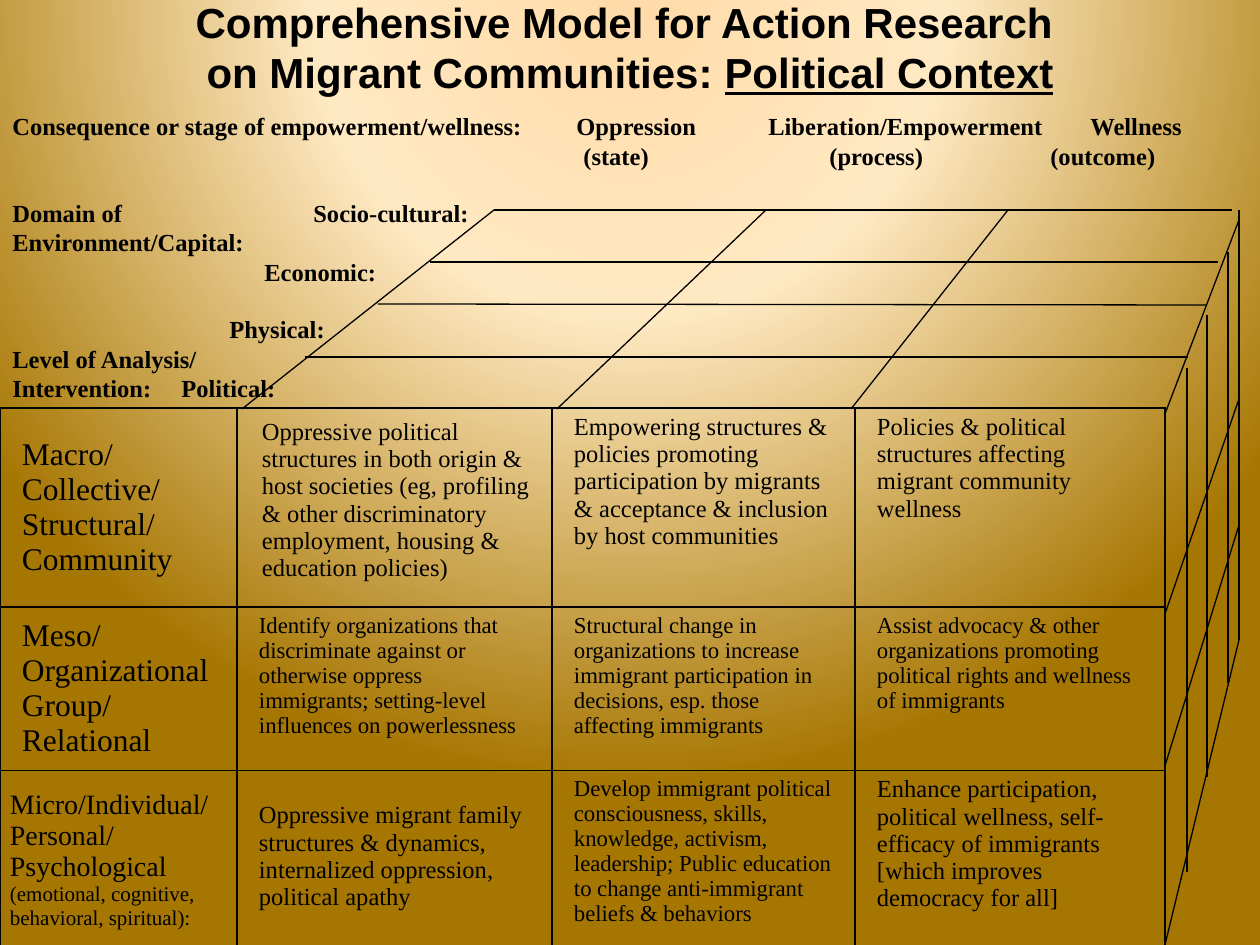
from dataclasses import dataclass

from lxml.etree import SubElement
from pptx import Presentation
from pptx.dml.color import RGBColor
from pptx.enum.shapes import MSO_CONNECTOR
from pptx.enum.text import MSO_ANCHOR, MSO_AUTO_SIZE, PP_ALIGN
from pptx.oxml import parse_xml
from pptx.oxml.ns import nsdecls, qn
from pptx.util import Pt

EMU_PER_PX = 914400 / 126


@dataclass(frozen=True)
class Theme:
    heading_font: str = "Arial"
    body_font: str = "Times New Roman"
    ink: str = "000000"
    gradient: tuple = ((0, "FFDBA9"), (40, "FFE9C2"), (100, "A67602"))
    title: int = 24
    level: int = 18
    small_level: int = 16
    body: int = 14
    tight: int = 13
    note: int = 12
    line: float = 0.75
    blank_line: int = 16


THEME = Theme()


@dataclass(frozen=True)
class Cell:
    """Paragraphs are lists of (text, size) runs; margins are px, in order left, top, right."""
    paragraphs: list
    margins: tuple = (22, 6, 22)
    anchor: MSO_ANCHOR = MSO_ANCHOR.TOP


def plain(text, size, **options):
    return Cell([[(text, size)]], **options)


HEADINGS = [  # text, tab stops in px, space before in points
    ("Consequence or stage of empowerment/wellness:\tOppression"
     "\tLiberation/Empowerment\tWellness", (564, 756, 1078), 0),
    ("\t(state)\t(process)\t(outcome)", (571, 817, 1038), 0),
    ("Domain of\tSocio-cultural:", (301,), THEME.blank_line),
    ("Environment/Capital:", (), 0),
    ("\tEconomic:", (252,), 0),
    ("\tPhysical:", (217,), THEME.blank_line),
    ("Level of Analysis/", (), 0),
    ("Intervention:\tPolitical:", (169,), 0),
]

MIDDLE = MSO_ANCHOR.MIDDLE
MATRIX = [
    [plain("Macro/ Collective/ Structural/ Community", THEME.level, anchor=MIDDLE),
     plain("Oppressive political structures in both origin & host societies (eg, profiling "
           "& other discriminatory employment, housing & education policies)",
           THEME.body, margins=(25, 11, 22)),
     plain("Empowering structures & policies promoting participation by migrants "
           "& acceptance & inclusion by host communities", THEME.body),
     plain("Policies & political structures affecting migrant community wellness",
           THEME.body)],
    [Cell([[("Meso/", THEME.level)], [("Organizational Group/", THEME.level)],
           [("Relational", THEME.level)]], anchor=MIDDLE),
     plain("Identify organizations that discriminate against or otherwise oppress "
           "immigrants; setting-level influences on powerlessness", THEME.tight),
     plain("Structural change in organizations to increase immigrant participation in "
           "decisions, esp. those affecting immigrants", THEME.tight),
     plain("Assist advocacy & other organizations promoting political rights and "
           "wellness of immigrants", THEME.tight)],
    [Cell([[("Micro/Individual/ Personal/", THEME.small_level)],
           [("Psychological", THEME.small_level),
            (" (emotional, cognitive, behavioral, spiritual):", THEME.note)]],
          margins=(10, 6, 9), anchor=MIDDLE),
     plain("Oppressive migrant family structures & dynamics, internalized oppression, "
           "political apathy", THEME.body, margins=(22, 32, 22)),
     plain("Develop immigrant political consciousness, skills, knowledge, activism, "
           "leadership; Public education to change anti-immigrant beliefs & behaviors",
           THEME.tight, margins=(22, 6, 10)),
     plain("Enhance participation, political wellness, self-efficacy of immigrants "
           "[which improves democracy for all]", THEME.body)],
]
COLUMN_WIDTHS = (237, 315, 303, 310)
ROW_HEIGHTS = (199, 159, 179)


def px(length):
    return round(length * EMU_PER_PX)


def add_run(paragraph, text, size, font=THEME.body_font, bold=False, underline=False):
    run = paragraph.add_run()
    run.text = text
    run.font.name = font
    run.font.size = Pt(size)
    run.font.bold = bold
    run.font.underline = underline
    run.font.color.rgb = RGBColor.from_string(THEME.ink)


def set_background(slide):
    stops = "".join(f'<a:gs pos="{position * 1000}"><a:srgbClr val="{color}"/></a:gs>'
                    for position, color in THEME.gradient)
    slide.element.cSld.insert(0, parse_xml(
        f'<p:bg {nsdecls("p", "a")}><p:bgPr><a:gradFill rotWithShape="0">'
        f'<a:gsLst>{stops}</a:gsLst><a:path path="circle">'
        '<a:fillToRect l="50000" t="-80000" r="50000" b="180000"/></a:path>'
        '</a:gradFill><a:effectLst/></p:bgPr></p:bg>'))


def place_title(slide, left, top, width, height):
    title = slide.shapes.title
    title.left, title.top, title.width, title.height = map(px, (left, top, width, height))
    frame = title.text_frame
    frame.auto_size = MSO_AUTO_SIZE.NONE
    frame.vertical_anchor = MSO_ANCHOR.MIDDLE
    paragraph = frame.paragraphs[0]
    paragraph.alignment = PP_ALIGN.CENTER
    style = {"size": THEME.title, "font": THEME.heading_font, "bold": True}
    add_run(paragraph, "Comprehensive Model for Action Research ", **style)
    paragraph.add_line_break()
    add_run(paragraph, "on Migrant Communities: ", **style)
    add_run(paragraph, "Political Context", underline=True, **style)


def draw_lines(slide, left, top, lines):
    """Draw each (x1, y1, x2, y2) relative to the given corner."""
    for x1, y1, x2, y2 in lines:
        connector = slide.shapes.add_connector(
            MSO_CONNECTOR.STRAIGHT, px(left + x1), px(top + y1), px(left + x2), px(top + y2))
        connector.line.color.rgb = RGBColor.from_string(THEME.ink)
        connector.line.width = Pt(THEME.line)
        SubElement(connector.element.spPr, qn("a:effectLst"))


def draw_top_face(slide, left, top):
    stages = [(0, 199, 252, 0), (315, 199, 524, 0), (609, 199, 766, 0)]
    domains = [(252, 0, 990, 0), (188, 52, 976, 52), (136, 94, 965, 95), (63, 147, 946, 147)]
    draw_lines(slide, left, top, stages + domains)


def draw_side_face(slide, left, top):
    levels = [(0, 204, 74, 10), (0, 404, 74, 189), (0, 556, 74, 315), (0, 735, 74, 430)]
    domains = [(74, 430, 74, 0), (63, 473, 63, 42), (42, 567, 42, 105), (22, 662, 22, 158)]
    draw_lines(slide, left, top, levels + domains)


def place_headings(slide, left, top, width, height):
    box = slide.shapes.add_textbox(*map(px, (left, top, width, height)))
    frame = box.text_frame
    frame.word_wrap = True
    for index, (text, stops, space) in enumerate(HEADINGS):
        paragraph = frame.add_paragraph() if index else frame.paragraphs[0]
        if stops:
            properties = paragraph._p.get_or_add_pPr()
            tab_list = SubElement(properties, qn("a:tabLst"))
            for stop in stops:
                SubElement(tab_list, qn("a:tab"), pos=str(px(stop)), algn="l")
        if space:
            paragraph.space_before = Pt(space)
        add_run(paragraph, text, THEME.body, bold=True)


def set_borders(cell):
    properties = cell._tc.get_or_add_tcPr()
    for index, side in enumerate(("lnL", "lnR", "lnT", "lnB")):
        properties.insert(index, parse_xml(
            f'<a:{side} {nsdecls("a")} w="{Pt(THEME.line)}"><a:solidFill>'
            f'<a:srgbClr val="{THEME.ink}"/></a:solidFill></a:{side}>'))


def fill_cell(cell, content):
    left, top, right = content.margins
    cell.margin_left, cell.margin_top, cell.margin_right = px(left), px(top), px(right)
    cell.margin_bottom = px(6)
    cell.vertical_anchor = content.anchor
    cell.fill.background()
    set_borders(cell)
    for index, runs in enumerate(content.paragraphs):
        frame = cell.text_frame
        paragraph = frame.add_paragraph() if index else frame.paragraphs[0]
        for text, size in runs:
            add_run(paragraph, text, size)


def place_matrix(slide, left, top):
    table = slide.shapes.add_table(
        len(ROW_HEIGHTS), len(COLUMN_WIDTHS), px(left), px(top),
        px(sum(COLUMN_WIDTHS)), px(sum(ROW_HEIGHTS))).table
    table.first_row = table.horz_banding = False
    for column, width in zip(table.columns, COLUMN_WIDTHS):
        column.width = px(width)
    for row, height, contents in zip(table.rows, ROW_HEIGHTS, MATRIX):
        row.height = px(height)
        for cell, content in zip(row.cells, contents):
            fill_cell(cell, content)


def main():
    presentation = Presentation()
    presentation.slide_width, presentation.slide_height = px(1260), px(945)
    slide = presentation.slides.add_slide(presentation.slide_layouts[5])
    set_background(slide)
    place_title(slide, 42, 0, 1176, 94)
    draw_top_face(slide, 242, 210)
    draw_side_face(slide, 1165, 210)
    place_headings(slide, 0, 105, 1260, 306)
    place_matrix(slide, 0, 408)
    presentation.save("out.pptx")


if __name__ == "__main__":
    main()
